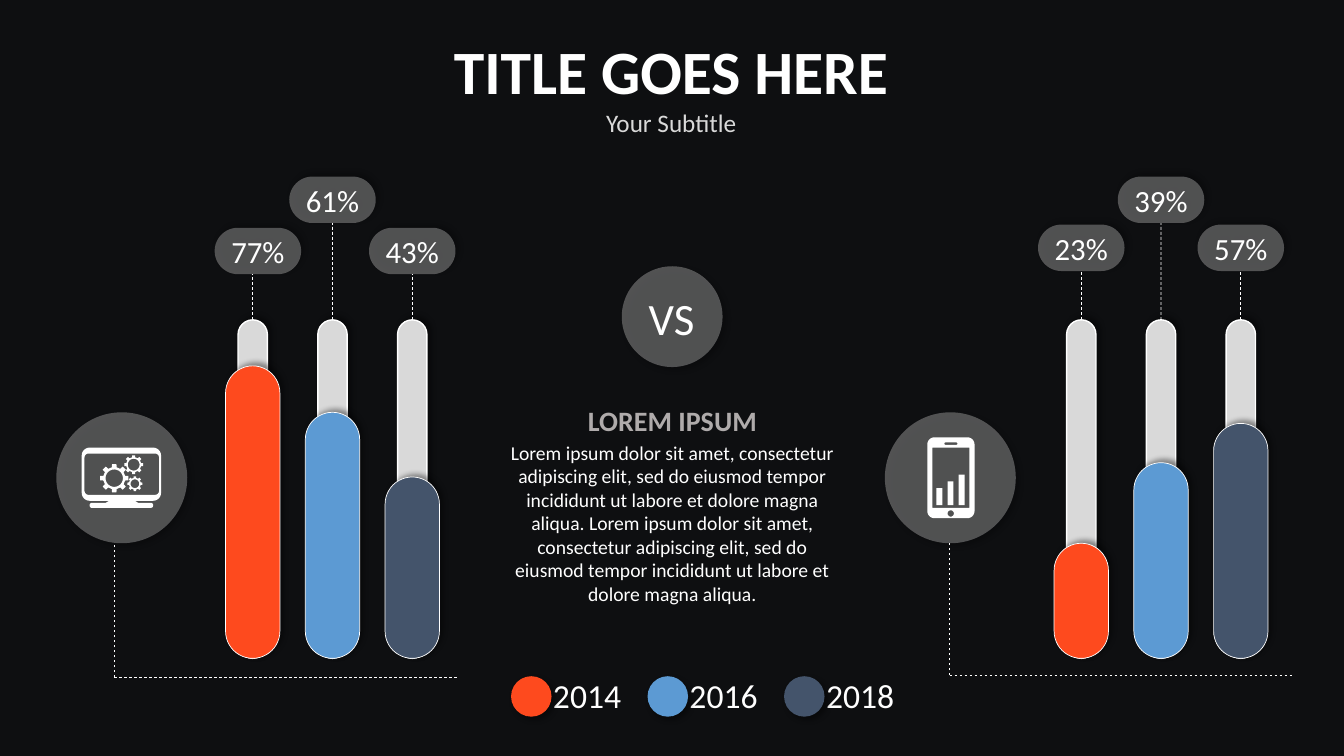
import math
from dataclasses import dataclass

from lxml import etree
from pptx import Presentation
from pptx.dml import color as c
from pptx.enum import dml, shapes, text
from pptx.oxml import ns
from pptx.util import Cm, Pt


@dataclass(frozen=True)
class Theme:
    font: str = "Calibri"
    back: str = "0E0F11"
    white: str = "FFFFFF"
    subtitle: str = "D9D9D9"
    heading: str = "AFABAB"
    track: str = "D9D9D9"
    badge: str = "808080"
    years: tuple = ("FE4A1E", "5C9AD3", "44546B")
    title_size: int = 44
    subtitle_size: int = 18
    heading_size: int = 20
    body_size: int = 14
    percent_size: int = 22
    legend_size: int = 24
    versus_size: int = 32


T = Theme()
LOREM = ("Lorem ipsum dolor sit amet, consectetur adipiscing elit, sed do eiusmod "
         "tempor incididunt ut labore et dolore magna aliqua.")
YEARS = ("2014", "2016", "2018")
BAR_PITCH, BAR_TOP, BAR_BOTTOM = 2.01, 8.06, 16.59
TRACK_W, BAR_W = 0.74, 1.37
CALLOUT_W, CALLOUT_H = 2.18, 1.17
UP_RIGHT, DOWN_RIGHT = 315, 45
# label, bar height, callout top, callout shift from its bar
LEFT_BARS = (("77%", 7.37, 5.74, 0.13), ("61%", 6.2, 4.45, 0), ("43%", 4.57, 5.74, 0))
RIGHT_BARS = (("23%", 2.9, 5.66, 0), ("39%", 4.93, 4.45, 0), ("57%", 5.92, 5.66, 0))


def rgb(value):
    return c.RGBColor.from_string(value)


def write(p, content, size, color, bold=False):
    p.text = content
    p.alignment = text.PP_ALIGN.CENTER
    f = p.runs[0].font
    f.name, f.size, f.bold = T.font, Pt(size), bold
    f.color.rgb = rgb(color)


def place(sp, x, y, w, h):
    sp.left, sp.top, sp.width, sp.height = Cm(x), Cm(y), Cm(w), Cm(h)


def fill_placeholder(sp, box, lines, gap):
    """Fill a placeholder with centred, unbulleted lines of (text, size, colour, bold)."""
    place(sp, *box)
    tf = sp.text_frame
    tf.auto_size = text.MSO_AUTO_SIZE.NONE
    tf.vertical_anchor = text.MSO_ANCHOR.TOP
    for i, line in enumerate(lines):
        p = tf.paragraphs[0] if i == 0 else tf.add_paragraph()
        pPr = p._p.get_or_add_pPr()
        pPr.set("marL", "0")
        pPr.set("indent", "0")
        etree.SubElement(pPr, ns.qn("a:buNone"))
        p.space_before = Pt(gap if i else 0)
        write(p, *line)


def add_shadow(sp, angle):
    sp.shadow.inherit = False
    effects = sp._element.spPr.find(ns.qn("a:effectLst"))
    shadow = etree.SubElement(effects, ns.qn("a:outerShdw"), blurRad=str(Pt(4)),
                              dist=str(Pt(3)), dir=str(angle * 60000), rotWithShape="0")
    black = etree.SubElement(shadow, ns.qn("a:srgbClr"), val="000000")
    etree.SubElement(black, ns.qn("a:alpha"), val="40000")


def add_solid(s, kind, x, y, w, h, color, angle=None, line=0, opacity=100):
    sp = s.shapes.add_shape(kind, Cm(x), Cm(y), Cm(w), Cm(h))
    if kind == shapes.MSO_SHAPE.ROUNDED_RECTANGLE:
        sp.adjustments[0] = 0.5
    sp.fill.solid()
    sp.fill.fore_color.rgb = rgb(color)
    if opacity < 100:
        clr = sp._element.spPr.find(".//" + ns.qn("a:srgbClr"))
        etree.SubElement(clr, ns.qn("a:alpha"), val=str(opacity * 1000))
    if line:
        sp.line.color.rgb = rgb(T.white)
        sp.line.width = Pt(line)
    else:
        sp.line.fill.background()
    if angle is None:
        sp.shadow.inherit = False
    else:
        add_shadow(sp, angle)
    return sp


def add_pill(s, x, y, w, h, color, **style):
    return add_solid(s, shapes.MSO_SHAPE.ROUNDED_RECTANGLE, x, y, w, h, color, UP_RIGHT, **style)


def add_disc(s, x, y, size, color, **style):
    return add_solid(s, shapes.MSO_SHAPE.OVAL, x, y, size, size, color, DOWN_RIGHT, **style)


def add_label(s, x, y, w, h, content, size):
    tf = s.shapes.add_textbox(Cm(x), Cm(y), Cm(w), Cm(h)).text_frame
    tf.word_wrap = False
    tf.margin_left = tf.margin_right = Cm(0)
    write(tf.paragraphs[0], content, size, T.white)


def add_dashed(s, x1, y1, x2, y2):
    ln = s.shapes.add_connector(shapes.MSO_CONNECTOR.STRAIGHT, Cm(x1), Cm(y1), Cm(x2), Cm(y2))
    ln.line.color.rgb = rgb(T.white)
    ln.line.width = Pt(0.5)
    ln.line.dash_style = dml.MSO_LINE.DASH
    etree.SubElement(ln._element.spPr, ns.qn("a:effectLst"))
    return ln


def add_bar(s, x, color, label, height, callout_top, shift):
    track = add_pill(s, x - TRACK_W / 2, BAR_TOP, TRACK_W, BAR_BOTTOM - BAR_TOP, T.track, line=1)
    add_pill(s, x - BAR_W / 2, BAR_BOTTOM - height, BAR_W, height, color, line=0.5)
    callout = add_pill(s, x + shift - CALLOUT_W / 2, callout_top, CALLOUT_W, CALLOUT_H,
                       T.badge, opacity=60)
    tf = callout.text_frame
    tf.word_wrap = False
    tf.vertical_anchor = text.MSO_ANCHOR.MIDDLE
    write(tf.paragraphs[0], label, T.percent_size, T.white)
    ln = add_dashed(s, x, BAR_TOP, x, callout_top + CALLOUT_H)
    ln.begin_connect(track, 0)
    if not shift:
        ln.end_connect(callout, 2)


def add_side(s, first_bar, bars, badge_x, corner_x, corner_y):
    add_disc(s, badge_x, 10.39, 3.3, T.badge, opacity=60)
    for i, bar in enumerate(bars):
        add_bar(s, first_bar + i * BAR_PITCH, T.years[i], *bar)
    add_dashed(s, corner_x, corner_y, corner_x + 8.64, corner_y)
    add_dashed(s, corner_x, corner_y, corner_x, corner_y - 3.38)


def rounded(x1, y1, x2, y2, r):
    """Points of a rectangle with corners of radius r."""
    corners = ((x2 - r, y2 - r), (x1 + r, y2 - r), (x1 + r, y1 + r), (x2 - r, y1 + r))
    return [(x + r * math.cos(math.radians(90 * q + a)), y + r * math.sin(math.radians(90 * q + a)))
            for q, (x, y) in enumerate(corners) for a in range(0, 91, 15)]


def circle(x, y, r):
    return rounded(x - r, y - r, x + r, y + r, r)


def gear(x, y, outer, root, teeth=8):
    points = []
    for i in range(teeth):
        for offset, r in ((-0.27, root), (-0.2, outer), (0.2, outer), (0.27, root)):
            a = 2 * math.pi * (i + offset) / teeth
            points.append((x + r * math.cos(a), y + r * math.sin(a)))
    return points


def add_outline(s, *contours):
    """Draw contours as one white shape; inner ones are holes."""
    paths = [[(Cm(x), Cm(y)) for x, y in contour] for contour in contours]
    fb = s.shapes.build_freeform(*paths[0][0])
    fb.add_line_segments(paths[0][1:])
    for points in paths[1:]:
        fb.move_to(*points[0])
        fb.add_line_segments(points[1:])
    sp = fb.convert_to_shape()
    sp.fill.solid()
    sp.fill.fore_color.rgb = rgb(T.white)
    sp.line.fill.background()
    sp.shadow.inherit = False


def add_computer(s):
    neck = [(2.75, 12.62), (3.4, 12.62), (3.48, 12.67), (2.67, 12.67)]
    add_outline(s, rounded(2.06, 11.28, 4.06, 12.62, 0.2), rounded(2.13, 11.43, 4.01, 12.47, 0.1),
                neck, rounded(2.26, 12.67, 3.86, 12.8, 0.06))
    for x, y, outer, root, hole in ((2.88, 12.05, 0.36, 0.28, 0.22), (3.4, 12.19, 0.19, 0.15, 0.11),
                                    (3.37, 11.71, 0.24, 0.19, 0.15)):
        add_outline(s, gear(x, y, outer, root), circle(x, y, hole))


def add_phone(s):
    add_outline(s, rounded(23.37, 11.02, 24.56, 13.06, 0.18), rounded(23.8, 11.15, 24.13, 11.21, 0.03),
                circle(23.96, 12.94, 0.08), rounded(23.5, 11.28, 24.43, 12.8, 0))
    for i, h in enumerate((0.43, 0.6, 0.77)):
        add_solid(s, shapes.MSO_SHAPE.RECTANGLE, 23.6 + i * 0.28, 12.73 - h, 0.15, h, T.white)


def add_legend(s):
    for i, year in enumerate(YEARS):
        x = 12.88 + i * 3.44
        add_label(s, x + 0.81, 16.89, 2.21, 1.27, year, T.legend_size)
        add_disc(s, x, 17.04, 1.02, T.years[i])


def main():
    prs = Presentation()
    prs.slide_width, prs.slide_height = Cm(33.87), Cm(19.05)
    s = prs.slides.add_slide(prs.slide_layouts[1])
    s.background.fill.solid()
    s.background.fill.fore_color.rgb = rgb(T.back)
    fill_placeholder(s.shapes.title, (9.27, 0.71, 15.29, 2.9),
                     (("TITLE GOES HERE", T.title_size, T.white, True),
                      ("Your Subtitle", T.subtitle_size, T.subtitle)), 0)
    fill_placeholder(s.placeholders[1], (12.5, 10.03, 8.89, 6.05),
                     (("LOREM IPSUM", T.heading_size, T.heading, True),
                      (f"{LOREM} {LOREM}", T.body_size, T.white)), 2.8)
    add_side(s, 6.37, LEFT_BARS, 1.42, 2.87, 17.07)
    add_computer(s)
    add_side(s, 27.25, RIGHT_BARS, 22.3, 23.93, 17.02)
    add_phone(s)
    add_disc(s, 15.67, 6.71, 2.54, T.badge, opacity=60)
    add_label(s, 15.82, 7.19, 2.21, 1.63, "VS", T.versus_size)
    add_legend(s)
    prs.save("out.pptx")


if __name__ == "__main__":
    main()
